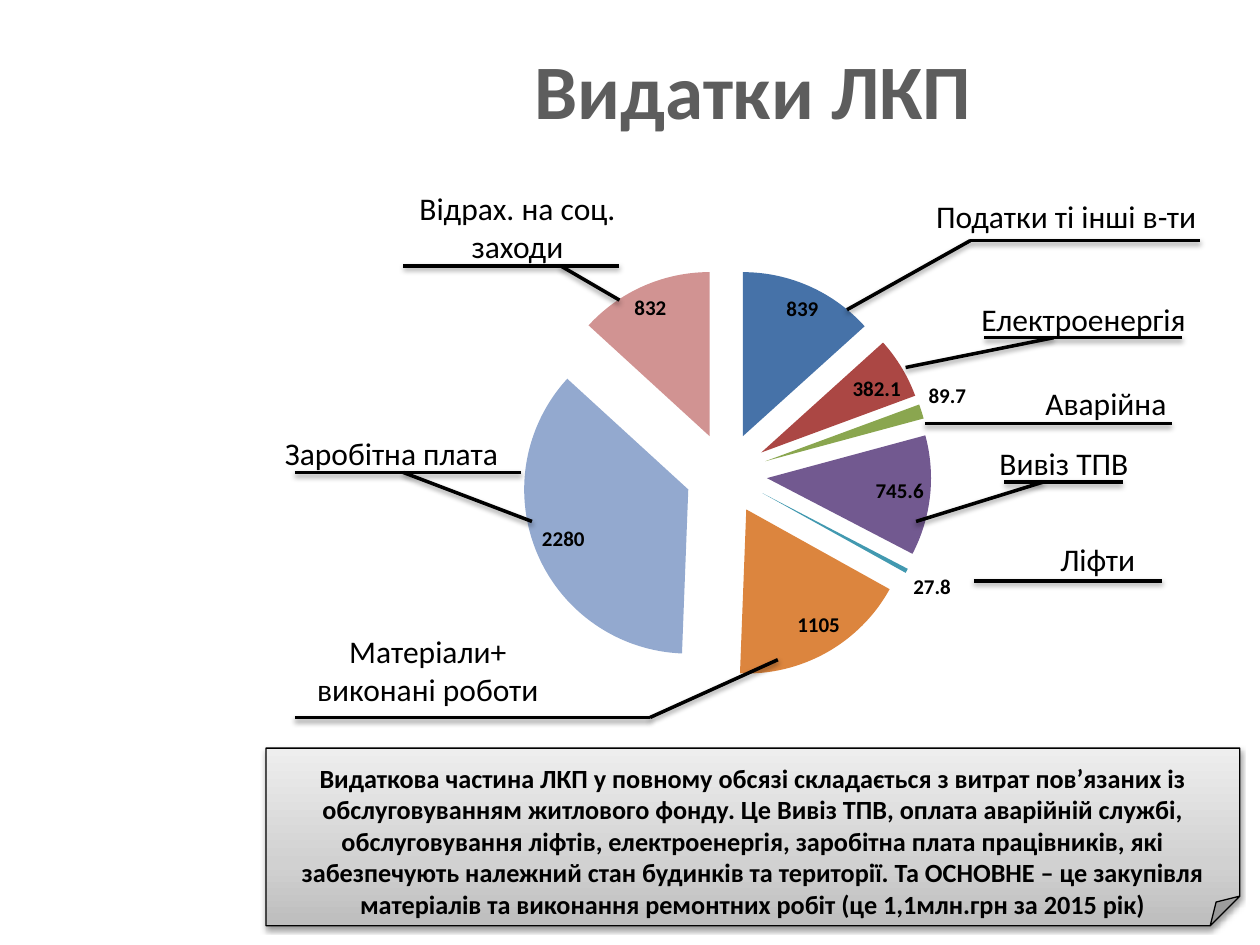
from lxml import etree
from copy import deepcopy
from pptx import Presentation
from pptx.chart.data import CategoryChartData
from pptx.dml.color import RGBColor
from pptx.enum.chart import XL_CHART_TYPE, XL_LABEL_POSITION
from pptx.enum.shapes import MSO_CONNECTOR, MSO_SHAPE
from pptx.enum.text import MSO_ANCHOR, PP_ALIGN
from pptx.oxml import parse_xml
from pptx.oxml.ns import nsdecls, qn
from pptx.util import Pt

HUES = {
    "ink": "000000", "paper": "FFFFFF", "title": "5D5D5D",
    "low": "BDBDBD", "mid": "D1D1D1", "high": "EEEEEE",
}
COSTS = [  # value and slice colour
    (839, "4672A8"), (382.1, "AB4744"), (89.7, "8AA64F"), (745.6, "725990"),
    (27.8, "4299B0"), (1105, "DC853E"), (2280, "93A9CF"), (832, "D19392"),
]
PLOT = {"x": 0.02, "y": 0.05, "w": 0.68, "h": 0.9}
NOTE = (
    "Видаткова частина ЛКП у повному обсязі складається з витрат пов’язаних із "
    "обслуговуванням житлового фонду. Це Вивіз ТПВ, оплата аварійній службі, "
    "обслуговування ліфтів, електроенергія, заробітна плата працівників, які "
    "забезпечують належний стан будинків та території. Та ОСНОВНЕ – це закупівля "
    "матеріалів та виконання ремонтних робіт (це 1,1млн.грн за 2015 рік)"
)
# Text, box, rule (x1, x2, y) and leader (x1, y1, x2, y2), both from the box corner
CALLS = [
    ("Матеріали+ виконані роботи", (168.5, 339, 152, 88), (0, 203, 71), (203, 71, 276, 38)),
    ("Податки ті інші в-ти", (524, 106.5, 170.5, 34), (30.5, 162, 31), (-40, 70.5, 30.5, 31)),
    ("Електроенергія", (551.5, 165, 135.5, 34), (11, 124, 28), (-34, 45, 50.5, 28)),
    ("Вивіз ТПВ", (546, 247.5, 124, 34), (28, 95.5, 28), (-22.5, 50.5, 50, 28)),
    ("Аварійна", (570, 219, 124, 22.5), (-41.5, 99.5, 23), None),
    ("Відрах. на соц. заходи", (214, 112.5, 163.5, 34), (16.5, 140, 39.5), (140, 59, 106.5, 39.5)),
    ("Заробітна плата", (152, 242, 143.5, 34), (16.5, 146, 28), (152, 56, 78.5, 28)),
    ("Ліфти", (590.5, 302.5, 73.5, 34), (-34, 73.5, 29.5), None),
]


def rgb(name):
    return RGBColor.from_string(HUES.get(name, name))


def style(item, **vals):
    for key, val in vals.items():
        setattr(item, key, val)


def write(shape, text, size, hue="ink", bold=False, **frame):
    box = shape.text_frame
    style(box, **{"word_wrap": True, "vertical_anchor": MSO_ANCHOR.MIDDLE, **frame})
    para = box.paragraphs[0]
    para.alignment = PP_ALIGN.CENTER
    run = para.add_run()
    run.text = text
    style(run.font, name="Calibri", size=Pt(size), bold=bold)
    run.font.color.rgb = rgb(hue)


def shade(shape):
    props = shape._element.spPr
    for old in props.findall(qn("a:effectLst")):
        props.remove(old)
    props.append(parse_xml(
        f'<a:effectLst {nsdecls("a")}><a:outerShdw blurRad="{Pt(3.1)}" '
        f'dist="{Pt(1.6)}" dir="5400000" rotWithShape="0"><a:srgbClr val="000000">'
        '<a:alpha val="38000"/></a:srgbClr></a:outerShdw></a:effectLst>'))


def draw_line(slide, *ends):
    line = slide.shapes.add_connector(MSO_CONNECTOR.STRAIGHT, *map(Pt, ends))
    line.line.width = Pt(2)
    line.line.color.rgb = rgb("ink")
    shade(line)


def add_title(slide, box):
    write(slide.shapes.add_textbox(*map(Pt, box)), "Видатки ЛКП", 44, "title", True)


def add_pie(slide, box):
    data = CategoryChartData()
    data.categories = [str(i + 1) for i in range(len(COSTS))]
    data.add_series("Series 1", [cost for cost, _ in COSTS])
    chart = slide.shapes.add_chart(XL_CHART_TYPE.PIE, *map(Pt, box), data).chart
    style(chart, has_legend=False, has_title=False)
    style(chart.font, name="Calibri", size=Pt(10))
    plot = chart.plots[0]
    style(plot, vary_by_categories=True, has_data_labels=True)

    # Value labels
    tags = plot.data_labels
    style(tags, show_value=True, show_percentage=False,
          position=XL_LABEL_POSITION.BEST_FIT)
    style(tags.font, name="Calibri", size=Pt(12), bold=True)
    tags.font.color.rgb = rgb("ink")

    # Slices pulled apart
    row = plot.series[0]
    row._element.find(qn("c:tx")).addnext(
        parse_xml(f'<c:explosion {nsdecls("c")} val="25"/>'))
    for i, (_, hue) in enumerate(COSTS):
        fill = row.points[i].format.fill
        fill.solid()
        fill.fore_color.rgb = rgb(hue)

    # Fixed plot area
    area = chart._chartSpace.chart.plotArea
    for old in area.findall(qn("c:layout")):
        area.remove(old)
    frame = parse_xml(f'<c:layout {nsdecls("c")}><c:manualLayout/></c:layout>')
    parts = [("layoutTarget", "inner"), ("xMode", "edge"), ("yMode", "edge"), *PLOT.items()]
    for key, val in parts:
        etree.SubElement(frame[0], qn(f"c:{key}")).set("val", str(val))
    area.insert(0, frame)


def add_call(slide, text, box, rule, lead):
    left, top = box[:2]
    rect = slide.shapes.add_shape(MSO_SHAPE.RECTANGLE, *map(Pt, box))
    rect.shadow.inherit = False
    rect.fill.solid()
    rect.fill.fore_color.rgb = rgb("paper")
    rect.line.fill.background()
    write(rect, text, 18)
    if lead:
        x1, y1, x2, y2 = lead
        draw_line(slide, left + x1, top + y1, left + x2, top + y2)
    x1, x2, y = rule
    draw_line(slide, left + x1, top + y, left + x2, top + y)


def add_note(slide, box):
    note = slide.shapes.add_shape(MSO_SHAPE.FOLDED_CORNER, *map(Pt, box))
    fill = note.fill
    fill.gradient()
    fill.gradient_angle = 90
    first = fill.gradient_stops[0]._gs
    first.addnext(deepcopy(first))
    for stop, place, hue in zip(fill.gradient_stops, (0, 0.35, 1), ("low", "mid", "high")):
        stop.position = place
        stop.color.rgb = rgb(hue)
    note.line.width = Pt(0.75)
    note.line.color.rgb = rgb("ink")
    shade(note)
    write(note, NOTE, 15, bold=True, vertical_anchor=MSO_ANCHOR.TOP,
          margin_top=Pt(8), margin_bottom=0)


def main():
    deck = Presentation()
    style(deck, slide_width=Pt(720), slide_height=Pt(540))
    slide = deck.slides.add_slide(deck.slide_layouts[6])
    add_pie(slide, (186, 140.5, 636, 260.5))
    add_title(slide, (247.5, 0, 366, 101.5))
    for call in CALLS:
        add_call(slide, *call)
    add_note(slide, (152, 427.5, 556.5, 101.5))
    deck.save("out.pptx")


if __name__ == "__main__":
    main()
